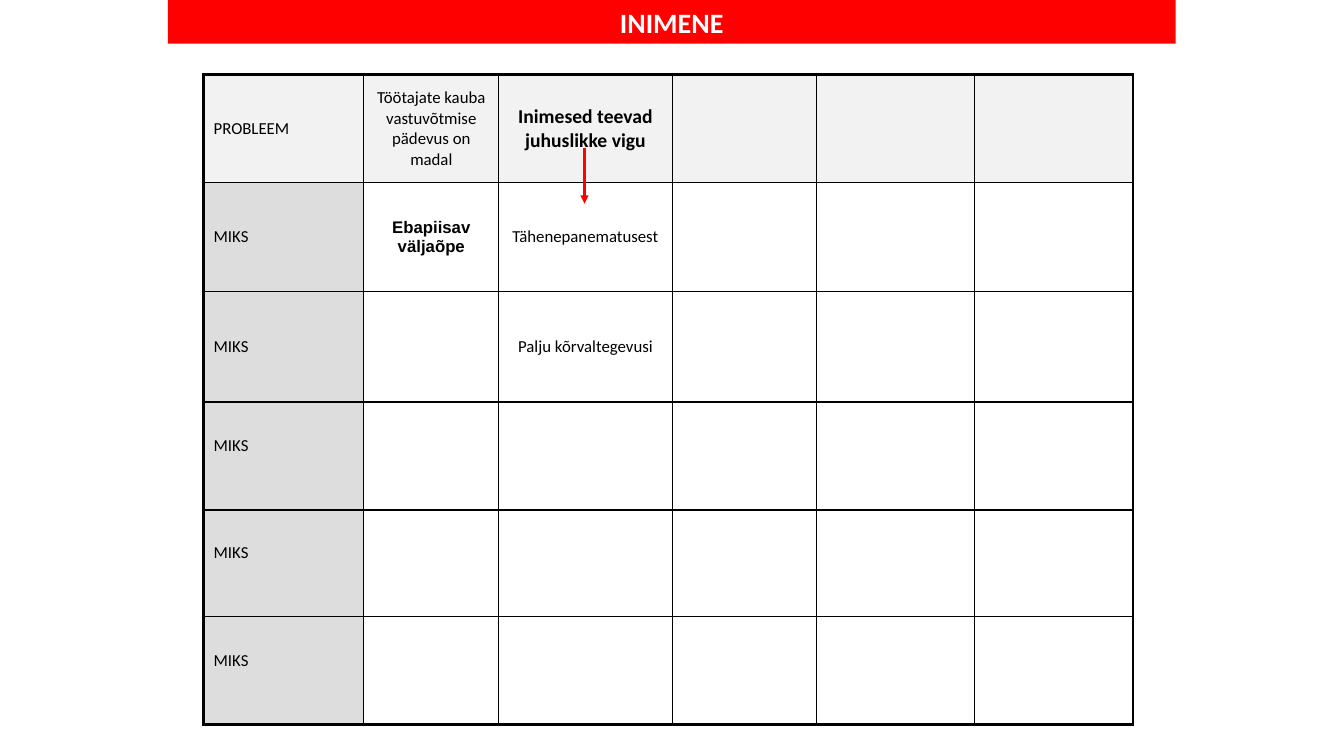
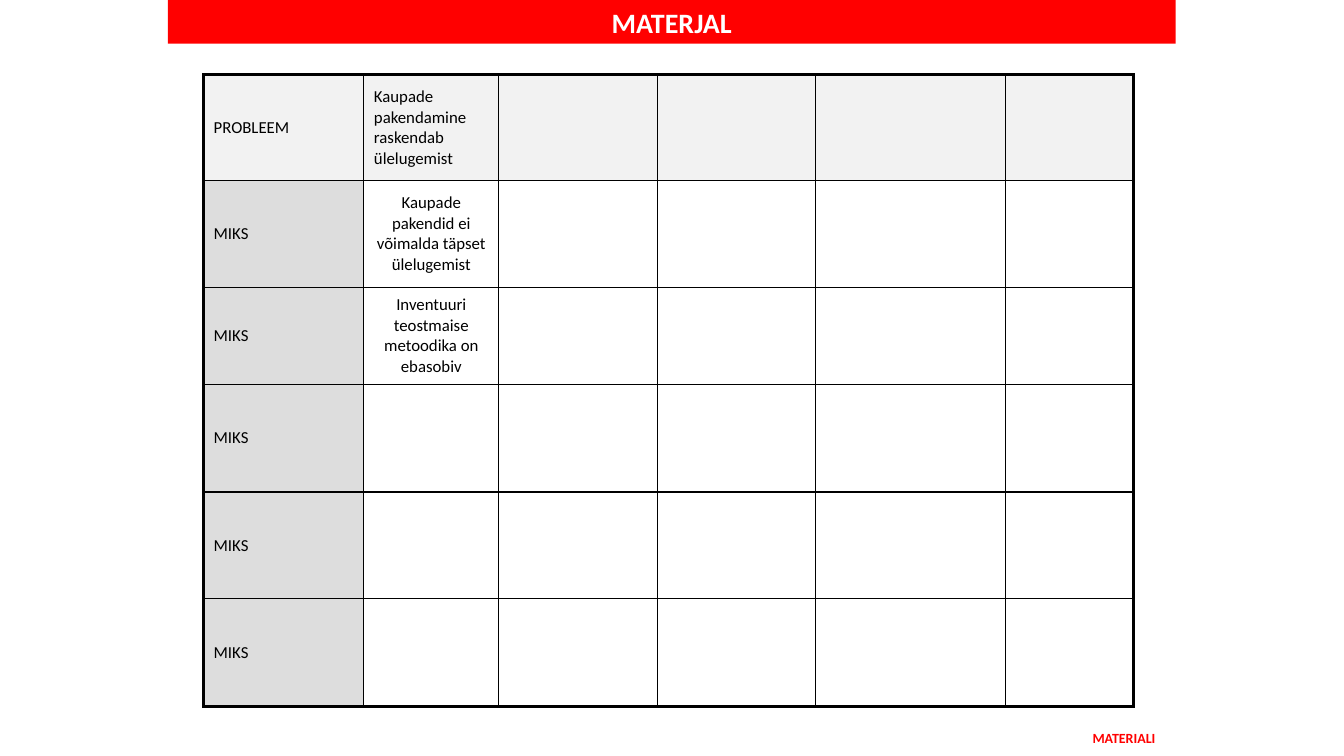
from dataclasses import dataclass, field

from lxml.etree import SubElement
from pptx import Presentation
from pptx.dml.color import RGBColor
from pptx.enum.shapes import MSO_CONNECTOR, MSO_SHAPE
from pptx.enum.text import MSO_ANCHOR, PP_ALIGN
from pptx.oxml import parse_xml
from pptx.oxml.ns import nsdecls, qn
from pptx.slide import Slide
from pptx.table import Table, _Cell
from pptx.text.text import TextFrame
from pptx.util import Cm, Pt

COLORS = {
    "red": "FF0000",
    "white": "FFFFFF",
    "black": "000000",
    "header": "E7E6E6",
    "label": "DDDDDD",
}
TABLE_LEFT, TABLE_TOP = 5.13, 1.88
THIN, THICK = 1, 2.25
ROW_LABELS = ["PROBLEEM"] + ["MIKS"] * 5


@dataclass
class Entry:
    """Text of one table cell and its format."""
    text: str
    size: float = 12
    bold: bool = False
    font: str = "Calibri"
    align: PP_ALIGN = PP_ALIGN.CENTER


@dataclass
class WhyPage:
    """A titled table of problems and their causes; lengths in cm."""
    title: str
    columns: list[float]
    rows: list[float]
    entries: dict[tuple[int, int], Entry]
    raised_labels: set[int] = field(default_factory=set)


PAGES = [
    WhyPage(
        "INIMENE",
        [4.04, 3.4, 4.37, 3.63, 3.99, 3.99],
        [2.72, 2.74, 2.79, 2.72, 2.69, 2.72],
        {
            (0, 1): Entry("Töötajate kauba vastuvõtmise pädevus on madal"),
            (0, 2): Entry("Inimesed teevad juhuslikke vigu", size=14, bold=True),
            (1, 1): Entry("Ebapiisav väljaõpe", bold=True, font="Arial"),
            (1, 2): Entry("Tähenepanematusest"),
            (2, 2): Entry("Palju kõrvaltegevusi"),
        },
        raised_labels={3, 4, 5},
    ),
    WhyPage(
        "MATERJAL",
        [4.04, 3.4, 3.99, 3.99, 4.78, 3.23],
        [2.67, 2.69, 2.44, 2.72, 2.69, 2.72],
        {
            (0, 1): Entry("Kaupade pakendamine raskendab ülelugemist", align=PP_ALIGN.LEFT),
            (1, 1): Entry("Kaupade pakendid ei võimalda täpset ülelugemist"),
            (2, 1): Entry("Inventuuri teostmaise metoodika on ebasobiv"),
        },
    ),
]


def color(name: str) -> RGBColor:
    return RGBColor.from_string(COLORS[name])


def write_text(frame: TextFrame, text: str, *, size: float = 12, bold: bool = False,
               font: str = "Calibri", fill: str = "black",
               align: PP_ALIGN = PP_ALIGN.CENTER) -> None:
    frame.word_wrap = True
    para = frame.paragraphs[0]
    para.alignment = align
    span = para.add_run()
    span.text = text
    span.font.size = Pt(size)
    span.font.bold = bold
    span.font.name = font
    span.font.color.rgb = color(fill)


def set_borders(cell: _Cell, widths: dict[str, float]) -> None:
    """Put the border lines, which must come before the fill, in schema order."""
    properties = cell._tc.get_or_add_tcPr()
    for index, side in enumerate("LRTB"):
        properties.insert(index, parse_xml(
            f'<a:ln{side} {nsdecls("a")} w="{Pt(widths[side])}"><a:solidFill>'
            f'<a:srgbClr val="{COLORS["black"]}"/></a:solidFill></a:ln{side}>'))


def fill_cell(cell: _Cell, row: int, column: int) -> None:
    if row > 0 and column > 0:
        cell.fill.background()
        return
    cell.fill.solid()
    cell.fill.fore_color.rgb = color("label" if row else "header")
    if row == 0:
        tint = cell._tc.tcPr.find(".//" + qn("a:srgbClr"))
        SubElement(tint, qn("a:alpha"), val="50000")


def add_banner(page: Slide, title: str) -> None:
    banner = page.shapes.add_shape(MSO_SHAPE.RECTANGLE, Cm(4.23), 0, Cm(25.4), Cm(1.1))
    banner.shadow.inherit = False
    banner.fill.solid()
    banner.fill.fore_color.rgb = color("red")
    banner.line.fill.background()
    banner.text_frame.vertical_anchor = MSO_ANCHOR.MIDDLE
    write_text(banner.text_frame, title, size=20, bold=True, fill="white")


def add_why_table(page: Slide, content: WhyPage) -> Table:
    last_row, last_column = len(content.rows) - 1, len(content.columns) - 1
    table = page.shapes.add_table(
        last_row + 1, last_column + 1, Cm(TABLE_LEFT), Cm(TABLE_TOP),
        Cm(sum(content.columns)), Cm(sum(content.rows))).table
    table.first_row = table.horz_banding = False
    for column, width in zip(table.columns, content.columns):
        column.width = Cm(width)
    for row, height in zip(table.rows, content.rows):
        row.height = Cm(height)

    labels = {(row, 0): Entry(text, align=PP_ALIGN.LEFT)
              for row, text in enumerate(ROW_LABELS)}
    entries = labels | content.entries
    for row in range(last_row + 1):
        for column in range(last_column + 1):
            cell = table.cell(row, column)
            cell.vertical_anchor = MSO_ANCHOR.MIDDLE
            fill_cell(cell, row, column)
            set_borders(cell, {
                "L": THIN if column else THICK,
                "R": THICK if column == last_column else THIN,
                "T": THIN if row else THICK,
                "B": THICK if row == last_row else THIN,
            })
            entry = entries.get((row, column))
            if entry:
                write_text(cell.text_frame, entry.text, size=entry.size, bold=entry.bold,
                           font=entry.font, align=entry.align)
    for row in content.raised_labels:
        table.cell(row, 0).margin_bottom = Cm(0.64)
    return table


def add_arrow(page: Slide, x: float, top: float, bottom: float) -> None:
    arrow = page.shapes.add_connector(
        MSO_CONNECTOR.STRAIGHT, Cm(x), Cm(top), Cm(x), Cm(bottom))
    arrow.line.color.rgb = color("red")
    arrow.line.width = Pt(1.5)
    SubElement(arrow.line._get_or_add_ln(), qn("a:tailEnd"), type="triangle")
    SubElement(arrow._element.spPr, qn("a:effectLst"))


def main() -> None:
    deck = Presentation()
    deck.slide_width, deck.slide_height = Cm(33.87), Cm(19.05)
    pages = []
    for content in PAGES:
        page = deck.slides.add_slide(deck.slide_layouts[6])
        add_banner(page, content.title)
        add_why_table(page, content)
        pages.append(page)
    people_page, material_page = pages

    # Arrow from the problem to its first cause
    add_arrow(people_page, 14.73, 3.73, 5.13)

    # Corner tag
    box = material_page.shapes.add_textbox(Cm(27.03), Cm(18.26), Cm(2.59), Cm(0.69))
    write_text(box.text_frame, "MATERIALI", size=10, bold=True, fill="red")

    deck.save("out.pptx")


if __name__ == "__main__":
    main()
